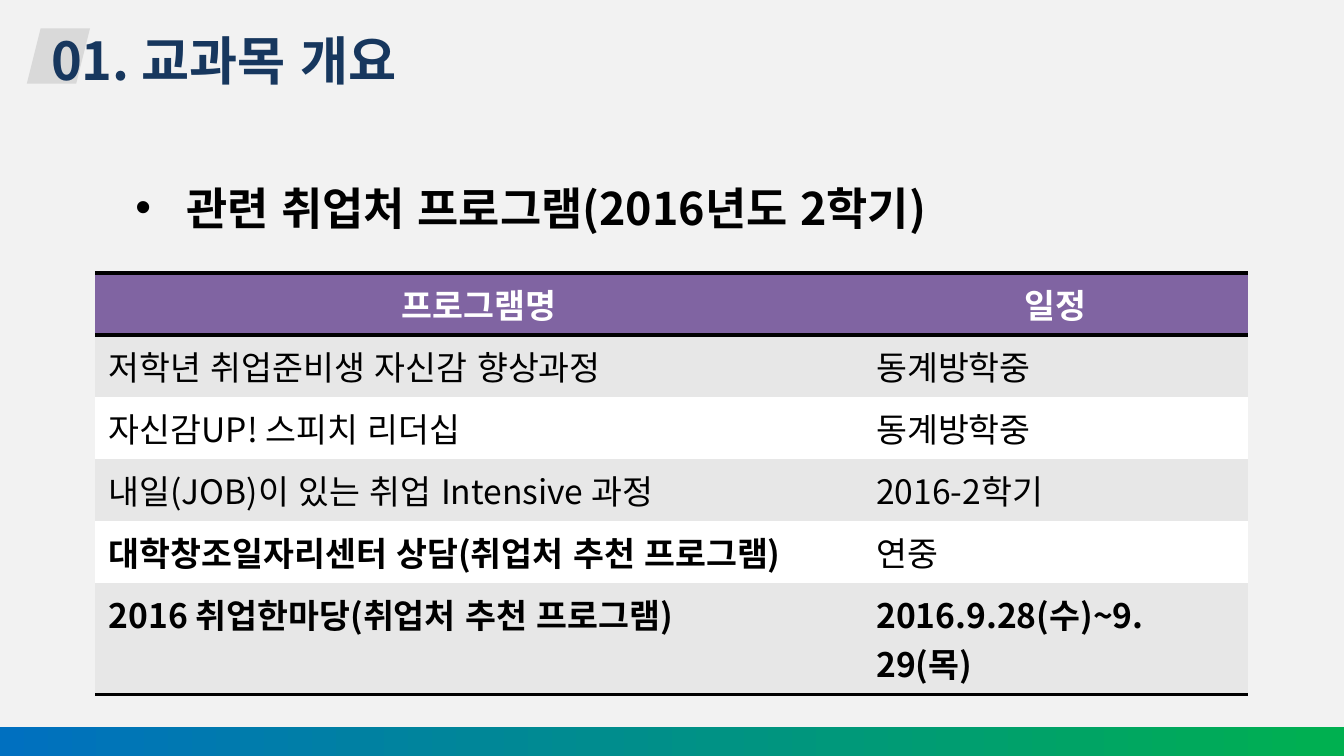
from lxml.etree import SubElement
from pptx import Presentation
from pptx.dml.color import RGBColor
from pptx.enum.lang import MSO_LANGUAGE_ID as Language
from pptx.enum.shapes import MSO_SHAPE as Preset
from pptx.enum.text import MSO_ANCHOR as Anchor, PP_ALIGN as Align
from pptx.oxml.ns import qn
from pptx.util import Inches, Pt

WIDTH = Inches(10)
HEIGHT = WIDTH * 9 // 16
FONT = "Noto Sans CJK KR"
NO_STYLE = "{2D5ABB26-0587-4C30-8999-92F81FD0307C}"
COLORS = {
    "page": "F2F2F2", "tab": "D9D9D9", "title": "17375E", "text": "000000",
    "header": "8064A2", "header_text": "FFFFFF", "band": "E7E7E7",
    "plain": "FFFFFF", "rule": "000000", "blue": "0070C0", "green": "00B050",
}
HEADINGS = ["프로그램명", "일정"]
PROGRAMS = [
    (("저학년 취업준비생 자신감 향상과정", False), ("동계방학중", False)),
    (("자신감UP! 스피치 리더십", False), ("동계방학중", False)),
    (("내일(JOB)이 있는 취업 Intensive 과정", False), ("2016-2학기", False)),
    (("대학창조일자리센터 상담(취업처 추천 프로그램)", True), ("연중", False)),
    (("2016 취업한마당(취업처 추천 프로그램)", True), ("2016.9.28(수)~9.29(목)", True)),
]


def color(name):
    return RGBColor.from_string(COLORS[name])


def share(left, top, width, height):
    return (int(WIDTH * left / 100), int(HEIGHT * top / 100),
            int(WIDTH * width / 100), int(HEIGHT * height / 100))


def write(frame, text, size=18, ink="text", bold=False, align=Align.LEFT, bullet=False):
    para = frame.paragraphs[0]
    para.alignment = align
    if bullet:
        props = para._p.get_or_add_pPr()
        props.set("marL", str(Inches(0.38)))
        props.set("indent", str(Inches(-0.38)))
        SubElement(props, qn("a:buFont"), typeface="Arial")
        SubElement(props, qn("a:buChar"), char="•")
    span = para.add_run()
    span.text = text
    span.font.size, span.font.bold, span.font.name = Pt(size), bold, FONT
    span.font.language_id = Language.KOREAN
    span.font.color.rgb = color(ink)
    for script in ("ea", "cs"):
        SubElement(span._r.get_or_add_rPr(), qn(f"a:{script}"), typeface=FONT)


def add_plain_shape(page, preset, box):
    shape = page.shapes.add_shape(preset, *box)
    shape.shadow.inherit = False
    shape.line.fill.background()
    return shape


def add_line_of_text(page, box, text, **style):
    frame = page.shapes.add_textbox(*box).text_frame
    frame.word_wrap = True
    frame.vertical_anchor = Anchor.MIDDLE
    write(frame, text, **style)


def add_title(page, box):
    left, top, width, height = box
    tab_box = (left, top + height // 25, int(width * 0.127), int(height * 0.82))
    tab = add_plain_shape(page, Preset.PARALLELOGRAM, tab_box)
    tab.fill.solid()
    tab.fill.fore_color.rgb = color("tab")
    inset = int(width * 0.022)
    add_line_of_text(page, (left + inset, top, width - inset, height),
                     "01. 교과목 개요", size=28, ink="title", bold=True)


def add_footer(page, box):
    bar = add_plain_shape(page, Preset.RECTANGLE, box)
    bar.fill.gradient()
    bar.fill.gradient_angle = 0
    for stop, name, position in zip(bar.fill.gradient_stops, ("blue", "green"), (0, 1)):
        stop.color.rgb = color(name)
        stop.position = position


def add_rules(cell, sides):
    props = cell._tc.get_or_add_tcPr()
    for place, side in enumerate(sides):
        line = props.makeelement(qn(f"a:{side}"), {"w": str(Pt(2))})
        fill = SubElement(line, qn("a:solidFill"))
        SubElement(fill, qn("a:srgbClr"), val=COLORS["rule"])
        props.insert(place, line)


def fill_cell(cell, text, fill, sides=(), **style):
    cell.fill.solid()
    cell.fill.fore_color.rgb = color(fill)
    write(cell.text_frame, text, **style)
    add_rules(cell, sides)


def add_schedule(page, box):
    table = page.shapes.add_table(len(PROGRAMS) + 1, len(HEADINGS), *box).table
    table.first_row = table.horz_banding = False
    table._tbl.tblPr.find(qn("a:tableStyleId")).text = NO_STYLE
    first_width = int(box[2] * 0.6655)
    table.columns[0].width = first_width
    table.columns[1].width = box[2] - first_width
    single_height = int(box[3] * 0.147)
    for row in table.rows:
        row.height = single_height
    table.rows[len(PROGRAMS)].height = box[3] - single_height * len(PROGRAMS)
    for column, heading in enumerate(HEADINGS):
        fill_cell(table.cell(0, column), heading, "header", ("lnT", "lnB"),
                  ink="header_text", bold=True, align=Align.CENTER)
    for row, program in enumerate(PROGRAMS, 1):
        sides = ("lnB",) if row == len(PROGRAMS) else ()
        for column, (text, bold) in enumerate(program):
            fill_cell(table.cell(row, column), text,
                      "band" if row % 2 else "plain", sides, bold=bold)


def build_slide(deck):
    page = deck.slides.add_slide(deck.slide_layouts[6])
    page.background.fill.solid()
    page.background.fill.fore_color.rgb = color("page")
    add_title(page, share(2, 3.4, 37, 8.9))
    add_footer(page, share(0, 96.2, 100, 3.8))
    add_line_of_text(page, share(9.1, 22.95, 67.7, 8.9),
                     "관련 취업처 프로그램(2016년도 2학기)", size=24, bold=True, bullet=True)
    add_schedule(page, share(7.1, 36.1, 85.8, 55.8))


def main():
    deck = Presentation()
    deck.slide_width, deck.slide_height = WIDTH, HEIGHT
    build_slide(deck)
    deck.save("out.pptx")


if __name__ == "__main__":
    main()
